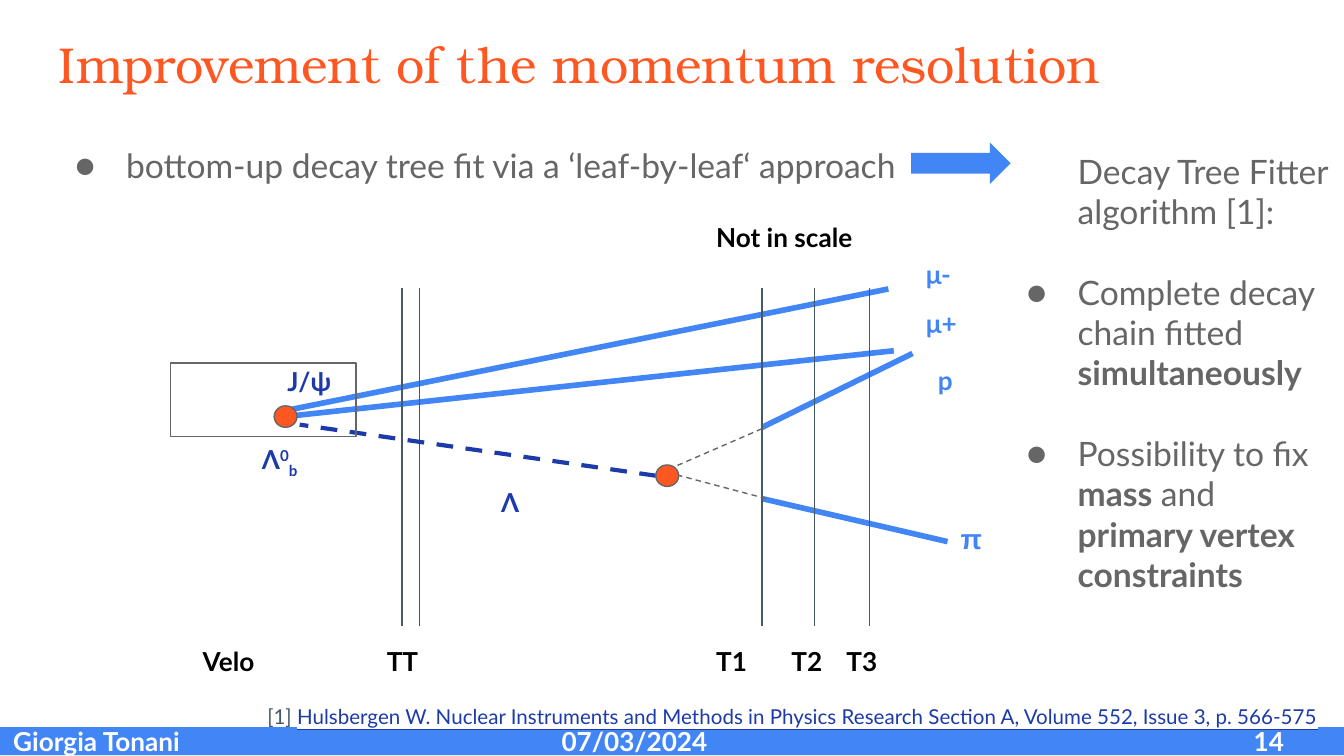
"""Build the slide on the decay tree fit and the momentum resolution."""

from lxml.etree import SubElement
from pptx import Presentation
from pptx.dml.color import RGBColor
from pptx.enum.dml import MSO_LINE
from pptx.enum.shapes import MSO_CONNECTOR, MSO_SHAPE as SHAPE
from pptx.oxml.ns import qn
from pptx.util import Inches, Pt

COLORS = {
    "orange": "FF5722", "grey": "666666", "blue": "4285F4", "navy": "1C3AA9",
    "slate": "455A64", "black": "000000", "white": "FFFFFF",
}
BOLD = {"bold": True}

TITLE = "Improvement of the momentum resolution"
APPROACH = "bottom-up decay tree fit via a ‘leaf-by-leaf‘ approach"
FITTER = [
    [("Decay Tree Fitter algorithm [1]:", {})],
    [("Complete decay chain fitted ", {}), ("simultaneously", BOLD)],
    [("Possibility to fix", {}), (" mass", BOLD), (" and ", {}),
     ("primary vertex constraints", BOLD)],
]
CITATION = [
    ("[1] ", {}),
    ("Hulsbergen W. Nuclear Instruments and Methods in Physics Research "
     "Section A, Volume 552, Issue 3, p. 566-575",
     {"color": "navy", "underline": True, "highlight": "white"}),
]
STATIONS = ["Velo", "TT", "T1", "T2", "T3"]
STATION_TABS = [1.37, 3.82, 4.38, 4.79]
FOOTER = ["Giorgia Tonani", "07/03/2024", "14"]
FOOTER_TABS = [4.08, 9.23]

PLANE_TOP, PLANE_BOTTOM = 2.14, 4.66
PLANES = [2.99, 3.12, 5.67, 6.06, 6.47]
TRACKS = [
    ((5.67, 3.18), (6.79, 2.63)),
    ((5.67, 3.71), (7.05, 4.03)),
    ((2.1, 3.06), (6.61, 2.15)),
    ((2.12, 3.1), (6.65, 2.61)),
]
UNSEEN_TRACKS = [((5.67, 3.19), (4.91, 3.52)), ((5.7, 3.71), (4.91, 3.5))]
LAMBDA_FLIGHT = ((4.88, 3.54), (2.23, 3.16))
VERTICES = [(4.88, 3.46), (2.04, 3.02)]
LABELS = [
    ("p", 6.88, 2.61, 0.57, "blue"),
    ("μ-", 6.79, 1.82, 0.57, "blue"),
    ("μ+", 6.79, 2.19, 0.65, "blue"),
    ("Λ", 3.63, 3.52, 0.32, "navy"),
    ("J/ψ", 2.04, 2.62, 0.79, "navy"),
    ("Not in scale", 5.23, 1.55, 1.26, "black"),
]
LABEL_HEIGHT = 0.44


def rgb(name):
    return RGBColor.from_string(COLORS[name])


def add_line(page, start, end, color, width, dashed=False):
    points = [Inches(value) for value in (*start, *end)]
    line = page.shapes.add_connector(MSO_CONNECTOR.STRAIGHT, *points)
    line.line.color.rgb = rgb(color)
    line.line.width = Pt(width)
    if dashed:
        line.line.dash_style = MSO_LINE.DASH
    SubElement(line._element.spPr, qn("a:effectLst"))


def add_figure(page, kind, place, fill=None, outline=None):
    figure = page.shapes.add_shape(kind, *map(Inches, place))
    figure.shadow.inherit = False
    if fill:
        figure.fill.solid()
        figure.fill.fore_color.rgb = rgb(fill)
    else:
        figure.fill.background()
    if outline:
        figure.line.color.rgb = rgb(outline)
        figure.line.width = Pt(0.75)
    else:
        figure.line.fill.background()


def add_span(para, words, size, color, font="Lato", bold=False,
             underline=None, baseline=0, highlight=None):
    span = para.add_run()
    span.text = words
    span.font.size, span.font.name = Pt(size), font
    span.font.bold, span.font.underline = bold, underline
    span.font.color.rgb = rgb(color)
    props = span.font._element
    if baseline:
        props.set("baseline", str(baseline * 1000))
    if highlight:
        mark = SubElement(props, qn("a:highlight"))
        SubElement(mark, qn("a:srgbClr"), val=COLORS[highlight])
        props.find(qn("a:solidFill")).addnext(mark)


def add_text(page, place, paragraphs, **style):
    box = page.shapes.add_textbox(*map(Inches, place))
    frame = box.text_frame
    frame.word_wrap = True
    frame.margin_left = frame.margin_right = Inches(0.1)
    frame.margin_top = frame.margin_bottom = Inches(0.1)
    for index, spans in enumerate(paragraphs):
        para = frame.add_paragraph() if index else frame.paragraphs[0]
        for words, extra in spans:
            add_span(para, words, **{**style, **extra})
    return frame.paragraphs


def add_tabbed(page, place, words, tabs, color):
    para = add_text(page, place, [[("\t".join(words), BOLD)]],
                    size=14, color=color)[0]
    stops = SubElement(para._p.get_or_add_pPr(), qn("a:tabLst"))
    for tab in tabs:
        SubElement(stops, qn("a:tab"), pos=str(Inches(tab)), algn="l")


def indent(para, bullet=True):
    props = para._p.get_or_add_pPr()
    props.set("marL", str(Inches(0.5)))
    props.set("indent", str(Inches(-0.38 if bullet else 0)))
    if bullet:
        tint = SubElement(props, qn("a:buClr"))
        SubElement(tint, qn("a:srgbClr"), val=COLORS["grey"])
        SubElement(props, qn("a:buFont"), typeface="Lato")
        SubElement(props, qn("a:buChar"), char="●")


def add_diagram(page):
    for track in TRACKS:
        add_line(page, *track, "blue", 3)
    for x in PLANES:
        add_line(page, (x, PLANE_TOP), (x, PLANE_BOTTOM), "slate", 0.75)
    for track in UNSEEN_TRACKS:
        add_line(page, *track, "grey", 0.75, dashed=True)
    add_line(page, *LAMBDA_FLIGHT, "navy", 2.25, dashed=True)
    for x, y in VERTICES:
        add_figure(page, SHAPE.OVAL, (x, y, 0.17, 0.16), "orange", "grey")
    add_figure(page, SHAPE.RECTANGLE, (1.27, 2.7, 1.38, 0.55), outline="grey")
    for words, x, y, width, color in LABELS:
        add_text(page, (x, y, width, LABEL_HEIGHT), [[(words, BOLD)]],
                 size=14, color=color)
    add_text(page, (7.05, 3.78, 0.65, 0.45), [[("π", BOLD)]],
             size=15, color="blue", font="Arial", highlight="white")
    baryon = [("Λ", {}), ("0", {"baseline": 30}), ("b", {"baseline": -25})]
    add_text(page, (1.85, 3.2, 0.65, LABEL_HEIGHT), [baryon],
             size=14, color="navy", bold=True)
    add_tabbed(page, (1.41, 4.7, 6.06, LABEL_HEIGHT), STATIONS, STATION_TABS, "black")


def main():
    deck = Presentation()
    deck.slide_width = Inches(10)
    deck.slide_height = deck.slide_width * 9 // 16
    page = deck.slides.add_slide(deck.slide_layouts[6])

    add_text(page, (0.34, 0.15, 9.32, 0.63), [[(TITLE, {})]],
             size=27, color="orange", font="TeX Gyre Bonum")
    approach = add_text(page, (0.34, 0.93, 9.32, 0.55), [[(APPROACH, {})]],
                        size=18, color="grey")[0]
    approach.line_spacing = 1.15
    indent(approach)

    add_diagram(page)

    points = add_text(page, (7.42, 1.02, 2.58, 4.55), FITTER, size=18, color="grey")
    for index, para in enumerate(points):
        if index:
            para.space_before = Pt(21.6)
        indent(para, bullet=index > 0)
    add_figure(page, SHAPE.RIGHT_ARROW, (6.78, 1.06, 0.74, 0.31), "blue")

    add_figure(page, SHAPE.RECTANGLE, (-0.04, 5.41, 10.06, 0.21), "blue")
    add_tabbed(page, (0, 5.3, 10.01, 0.44), FOOTER, FOOTER_TABS, "white")
    citation = add_text(page, (1.89, 5.11, 9.21, 0.44), [CITATION],
                        size=11, color="slate")[0]
    citation.line_spacing = 1.15
    deck.save("out.pptx")


if __name__ == "__main__":
    main()
